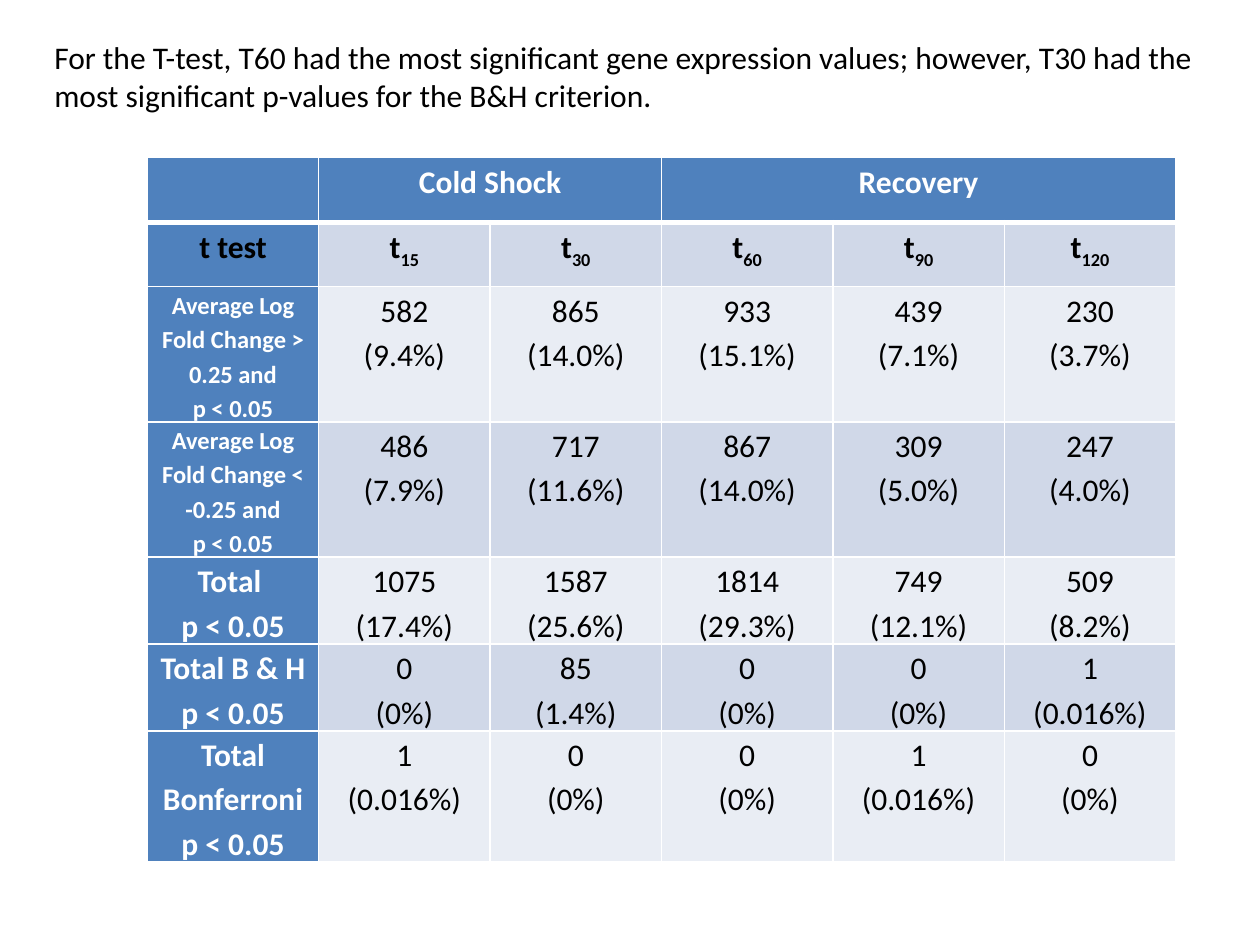
from lxml.etree import SubElement
from pptx import Presentation
from pptx.dml.color import RGBColor
from pptx.enum.text import MSO_ANCHOR, MSO_AUTO_SIZE, PP_ALIGN
from pptx.oxml.ns import qn
from pptx.util import Cm, Pt

COLORS = {
    "header": "4F81BD",
    "dark_band": "D0D8E8",
    "light_band": "E9EDF4",
    "white": "FFFFFF",
    "black": "000000",
}
TITLE = ("For the T-test, T60 had the most significant gene expression values; "
         "however, T30 had the most significant p-values for the B&H criterion.")
TIMES = ["15", "30", "60", "90", "120"]
ROW_HEIGHTS = [1.3, 1.3, 2.59, 2.59, 1.68, 1.68, 2.49]

# Label, label size, then count and percentage for each time
RESULTS = [
    ("Average Log Fold Change > 0.25 and", 14,
     [("582", "9.4"), ("865", "14.0"), ("933", "15.1"), ("439", "7.1"), ("230", "3.7")]),
    ("Average Log Fold Change < -0.25 and", 14,
     [("486", "7.9"), ("717", "11.6"), ("867", "14.0"), ("309", "5.0"), ("247", "4.0")]),
    ("Total ", 18,
     [("1075", "17.4"), ("1587", "25.6"), ("1814", "29.3"), ("749", "12.1"), ("509", "8.2")]),
    ("Total B & H", 18,
     [("0", "0"), ("85", "1.4"), ("0", "0"), ("0", "0"), ("1", "0.016")]),
    ("Total Bonferroni", 18,
     [("1", "0.016"), ("0", "0"), ("0", "0"), ("1", "0.016"), ("0", "0")]),
]


class SlideBuilder:
    font_name = "Calibri"
    text_size = 18

    def __init__(self, slide):
        self.slide = slide

    def style(self, font, color="black", size=None, bold=False):
        font.name = self.font_name
        font.size = Pt(size or self.text_size)
        font.bold = bold
        font.color.rgb = RGBColor.from_string(COLORS[color])

    def title(self, text, left, top, width, height):
        shape = self.slide.shapes.title
        shape.left, shape.top, shape.width, shape.height = map(Cm, (left, top, width, height))
        frame = shape.text_frame
        frame.text = text
        frame.word_wrap = True
        frame.auto_size = MSO_AUTO_SIZE.SHAPE_TO_FIT_TEXT
        frame.vertical_anchor = MSO_ANCHOR.TOP
        paragraph = frame.paragraphs[0]
        paragraph.alignment = PP_ALIGN.LEFT
        self.style(paragraph.font)

    def table(self, left, top, column_width, columns, row_heights):
        frame = self.slide.shapes.add_table(
            len(row_heights), columns, Cm(left), Cm(top),
            Cm(column_width * columns), Cm(sum(row_heights)))
        table = frame.table
        table.first_row = table.horz_banding = False
        for column in table.columns:
            column.width = Cm(column_width)
        for row, height in zip(table.rows, row_heights):
            row.height = Cm(height)
        return table

    def border(self, cell, side, width):
        properties = cell._tc.get_or_add_tcPr()
        line = SubElement(properties, qn(f"a:ln{side}"), w=str(Pt(width)))
        fill = SubElement(line, qn("a:solidFill"))
        SubElement(fill, qn("a:srgbClr"), val=COLORS["white"])

    def cell(self, cell, lines, fill, top=1, bottom=1, **style):
        """Fill a cell; each line is a list of (text, is_subscript) runs."""
        for side, width in (("L", 1), ("R", 1), ("T", top), ("B", bottom)):
            self.border(cell, side, width)
        cell.fill.solid()
        cell.fill.fore_color.rgb = RGBColor.from_string(COLORS[fill])
        cell.margin_left = cell.margin_right = Cm(0.19)
        cell.margin_top = cell.margin_bottom = 0
        frame = cell.text_frame
        for index, runs in enumerate(lines):
            paragraph = frame.add_paragraph() if index else frame.paragraphs[0]
            paragraph.alignment = PP_ALIGN.CENTER
            paragraph.line_spacing = 1.15
            for text, is_subscript in runs:
                run = paragraph.add_run()
                run.text = text
                self.style(run.font, **style)
                if is_subscript:
                    run._r.get_or_add_rPr().set("baseline", "-25000")


def plain(*lines):
    return [[(line, False)] for line in lines]


def main():
    presentation = Presentation()
    presentation.slide_width, presentation.slide_height = Cm(25.4), Cm(19.05)
    slide = presentation.slides.add_slide(presentation.slide_layouts[5])
    builder = SlideBuilder(slide)

    builder.title(TITLE, 0.84, 0.64, 23.92, 1.8)
    table = builder.table(2.97, 3.18, 3.455, len(TIMES) + 1, ROW_HEIGHTS)

    # Phase headings
    headings = {1: "Cold Shock", 3: "Recovery"}
    for column in range(len(TIMES) + 1):
        lines = plain(headings[column]) if column in headings else []
        builder.cell(table.cell(0, column), lines, "header", bottom=3,
                     color="white", bold=True)
    table.cell(0, 1).merge(table.cell(0, 2))
    table.cell(0, 3).merge(table.cell(0, 5))

    # Time points
    builder.cell(table.cell(1, 0), plain("t test"), "header", top=3, bold=True)
    for column, time in enumerate(TIMES, start=1):
        builder.cell(table.cell(1, column), [[("t", False), (time, True)]],
                     "dark_band", top=3, bold=True)

    # Test results
    for row, (label, size, values) in enumerate(RESULTS, start=2):
        builder.cell(table.cell(row, 0), plain(label, "p < 0.05"), "header",
                     color="white", size=size, bold=True)
        band = "dark_band" if row % 2 else "light_band"
        for column, (count, percentage) in enumerate(values, start=1):
            builder.cell(table.cell(row, column), plain(count, f"({percentage}%)"), band)

    presentation.save("out.pptx")


if __name__ == "__main__":
    main()
